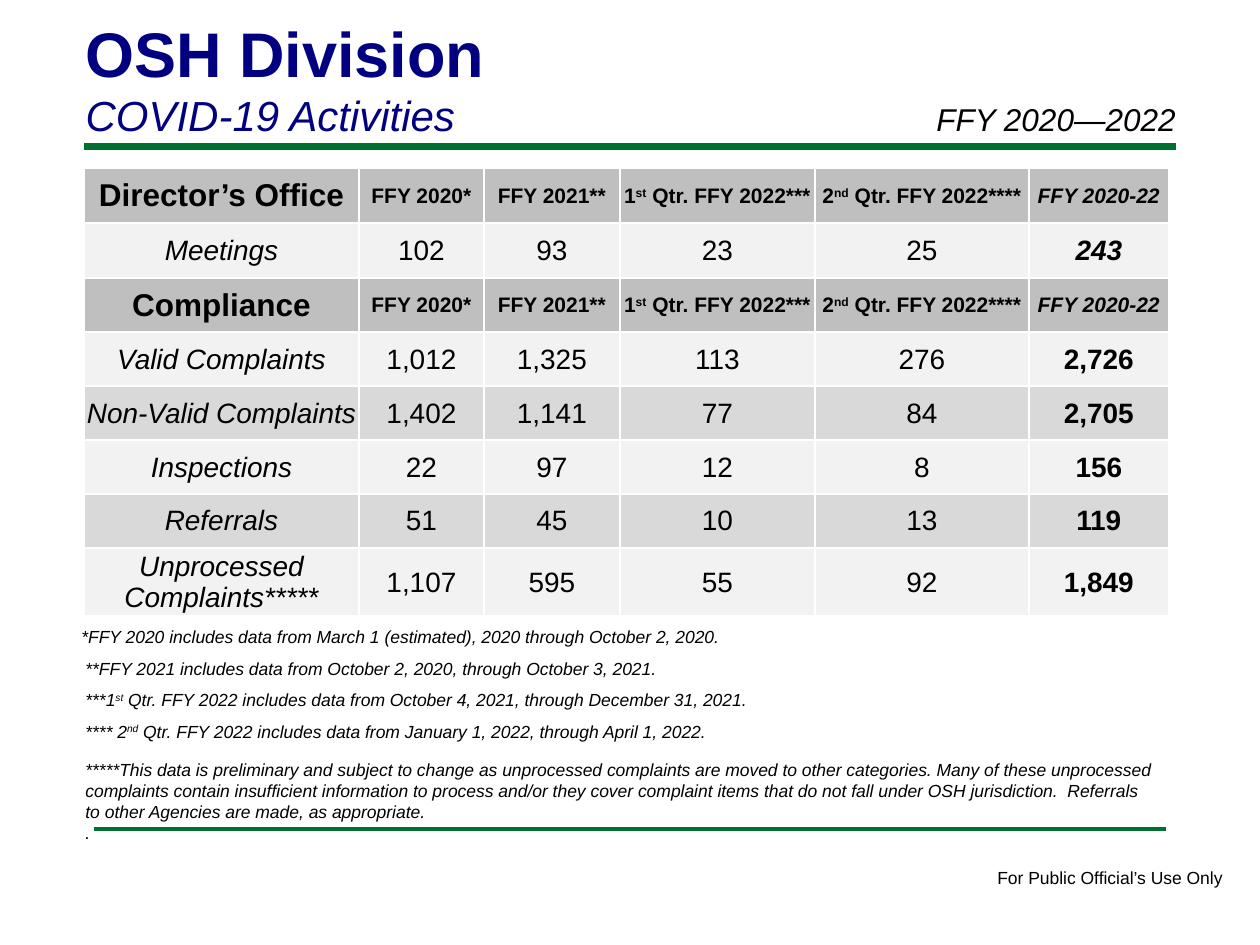
from dataclasses import dataclass

from lxml import etree
from pptx import Presentation
from pptx import util as u
from pptx.dml.color import RGBColor
from pptx.enum import shapes, text
from pptx.oxml import parse_xml
from pptx.oxml.ns import nsdecls, qn


@dataclass(frozen=True)
class Theme:
    face: str = "Arial"
    ink: str = "000000"
    navy: str = "000080"
    green: str = "007030"
    white: str = "FFFFFF"
    header: str = "BFBFBF"
    light: str = "F2F2F2"
    dark: str = "D9D9D9"
    title: int = 36
    subtitle: int = 24
    section: int = 18
    figure: int = 16
    column: int = 12
    note: int = 10


THEME = Theme()

TITLE, SUBTITLE = "OSH Division", "COVID-19 Activities"
PERIOD = "FFY 2020—2022"
FOOTER = "For Public Official’s Use Only"
PERIODS = ["FFY 2020*", "FFY 2021**", "1^st^ Qtr. FFY 2022***",
           "2^nd^ Qtr. FFY 2022****", "FFY 2020-22"]
SECTIONS = {
    "Director’s Office": [
        ("Meetings", "102", "93", "23", "25", "243"),
    ],
    "Compliance": [
        ("Valid Complaints", "1,012", "1,325", "113", "276", "2,726"),
        ("Non-Valid Complaints", "1,402", "1,141", "77", "84", "2,705"),
        ("Inspections", "22", "97", "12", "8", "156"),
        ("Referrals", "51", "45", "10", "13", "119"),
        ("Unprocessed Complaints*****", "1,107", "595", "55", "92", "1,849"),
    ],
}
ITALIC_TOTALS = {"Meetings"}
FOOTNOTES = [
    "*FFY 2020 includes data from March 1 (estimated), 2020 through October 2, 2020.",
    "**FFY 2021 includes data from October 2, 2020, through October 3, 2021.",
    "***1^st^ Qtr. FFY 2022 includes data from October 4, 2021, through December 31, 2021.",
    "**** 2^nd^ Qtr. FFY 2022 includes data from January 1, 2022, through April 1, 2022.",
]
PRELIMINARY = [
    "*****This data is preliminary and subject to change as unprocessed complaints are "
    "moved to other categories. Many of these unprocessed complaints contain insufficient "
    "information to process and/or they cover complaint items that do not fall under OSH "
    "jurisdiction.  Referrals to other Agencies are made, as appropriate.",
    ".",
]

COLUMN_WIDTHS = [275, 125, 136, 195, 214, 140]
ROW_HEIGHTS = [55, 55] + [54] * 6
TABLE_LEFT, TABLE_TOP = 84, 168
NOTE_TOP, NOTE_STEP = 620, 31.5
RULES = [(84, 1176, 147, 4), (94, 1166, 829, 2)]


def px(length):
    return u.Emu(round(length * 914400 / 126))


def write(paragraph, content, size, color=THEME.ink, bold=False, italic=False):
    for index, part in enumerate(content.split("^")):
        run = paragraph.add_run()
        run.text = part
        if index % 2:
            run.font._element.set("baseline", "30000")
    font = paragraph.font
    font.name, font.size = THEME.face, u.Pt(size)
    font.bold, font.italic = bold, italic
    font.color.rgb = RGBColor.from_string(color)


def add_note(slide, box, lines, size=THEME.note, italic=True, wrap=True):
    frame = slide.shapes.add_textbox(*map(px, box)).text_frame
    frame.word_wrap = wrap
    for index, line in enumerate(lines):
        paragraph = frame.add_paragraph() if index else frame.paragraphs[0]
        write(paragraph, line, size, italic=italic)


def add_rule(slide, left, right, y, weight):
    rule = slide.shapes.add_connector(
        shapes.MSO_CONNECTOR.STRAIGHT, px(left), px(y), px(right), px(y))
    rule.line.color.rgb = RGBColor.from_string(THEME.green)
    rule.line.width = u.Pt(weight)
    etree.SubElement(rule._element.spPr, qn("a:effectLst"))


def fill_cell(cell, content, fill, **style):
    cell.margin_left = cell.margin_right = cell.margin_top = px(1)
    cell.margin_bottom = 0
    cell.vertical_anchor = text.MSO_ANCHOR.MIDDLE
    properties = cell._tc.get_or_add_tcPr()
    for side in "LRTB":
        properties.append(parse_xml(
            f'<a:ln{side} {nsdecls("a")} w="12700"><a:solidFill>'
            f'<a:srgbClr val="{THEME.white}"/></a:solidFill></a:ln{side}>'))
    cell.fill.solid()
    cell.fill.fore_color.rgb = RGBColor.from_string(fill)
    paragraph = cell.text_frame.paragraphs[0]
    paragraph.alignment = text.PP_ALIGN.CENTER
    write(paragraph, content, **style)


def table_rows():
    last = len(PERIODS)
    for section, activities in SECTIONS.items():
        yield THEME.header, [
            (label, dict(size=THEME.column if col else THEME.section,
                         bold=True, italic=col == last))
            for col, label in enumerate([section, *PERIODS])]
        for index, activity in enumerate(activities):
            yield THEME.dark if index % 2 else THEME.light, [
                (value, dict(size=THEME.figure, bold=col == last,
                             italic=col == 0 or (col == last and activity[0] in ITALIC_TOTALS)))
                for col, value in enumerate(activity)]


def add_activity_table(slide):
    table = slide.shapes.add_table(
        len(ROW_HEIGHTS), len(COLUMN_WIDTHS), px(TABLE_LEFT), px(TABLE_TOP),
        px(sum(COLUMN_WIDTHS)), px(sum(ROW_HEIGHTS))).table
    table.first_row = table.horz_banding = False
    for column, width in zip(table.columns, COLUMN_WIDTHS):
        column.width = px(width)
    for row, height, (fill, entries) in zip(table.rows, ROW_HEIGHTS, table_rows()):
        row.height = px(height)
        for cell, (content, style) in zip(row.cells, entries):
            fill_cell(cell, content, fill, **style)


def add_title(slide):
    title = slide.shapes.title
    title.left, title.top, title.width, title.height = map(px, (73, 8, 1040, 140))
    frame = title.text_frame
    frame.auto_size = text.MSO_AUTO_SIZE.NONE
    frame.vertical_anchor = text.MSO_ANCHOR.TOP
    write(frame.paragraphs[0], TITLE, THEME.title, THEME.navy, bold=True)
    write(frame.add_paragraph(), SUBTITLE, THEME.subtitle, THEME.navy, italic=True)
    for paragraph in frame.paragraphs:
        paragraph.alignment = text.PP_ALIGN.LEFT
        paragraph.space_before = u.Pt(0)


def main():
    deck = Presentation()
    deck.slide_width, deck.slide_height = px(1260), px(945)
    slide = deck.slides.add_slide(deck.slide_layouts.get_by_name("Title Only"))
    for rule in RULES:
        add_rule(slide, *rule)
    add_note(slide, (985, 861, 253, 34), [FOOTER], italic=False, wrap=False)
    add_title(slide)
    add_note(slide, (73, 753, 1092, 97), PRELIMINARY)
    add_activity_table(slide)
    for index, footnote in enumerate(FOOTNOTES):
        add_note(slide, (73 if index else 69, NOTE_TOP + index * NOTE_STEP, 1100, 34), [footnote])
    add_note(slide, (924, 94, 315, 50), [PERIOD], size=THEME.section)
    deck.save("out.pptx")


if __name__ == "__main__":
    main()
